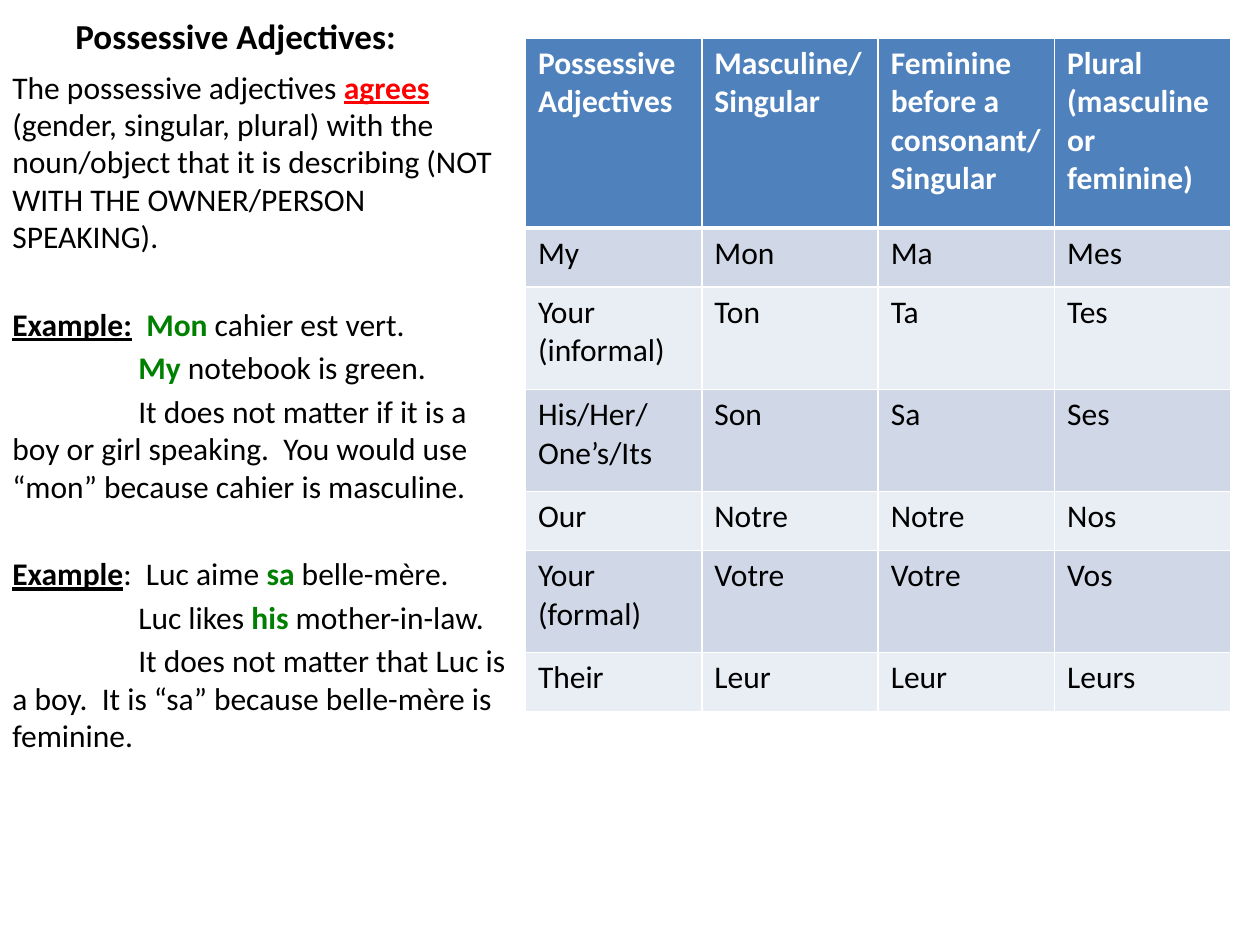
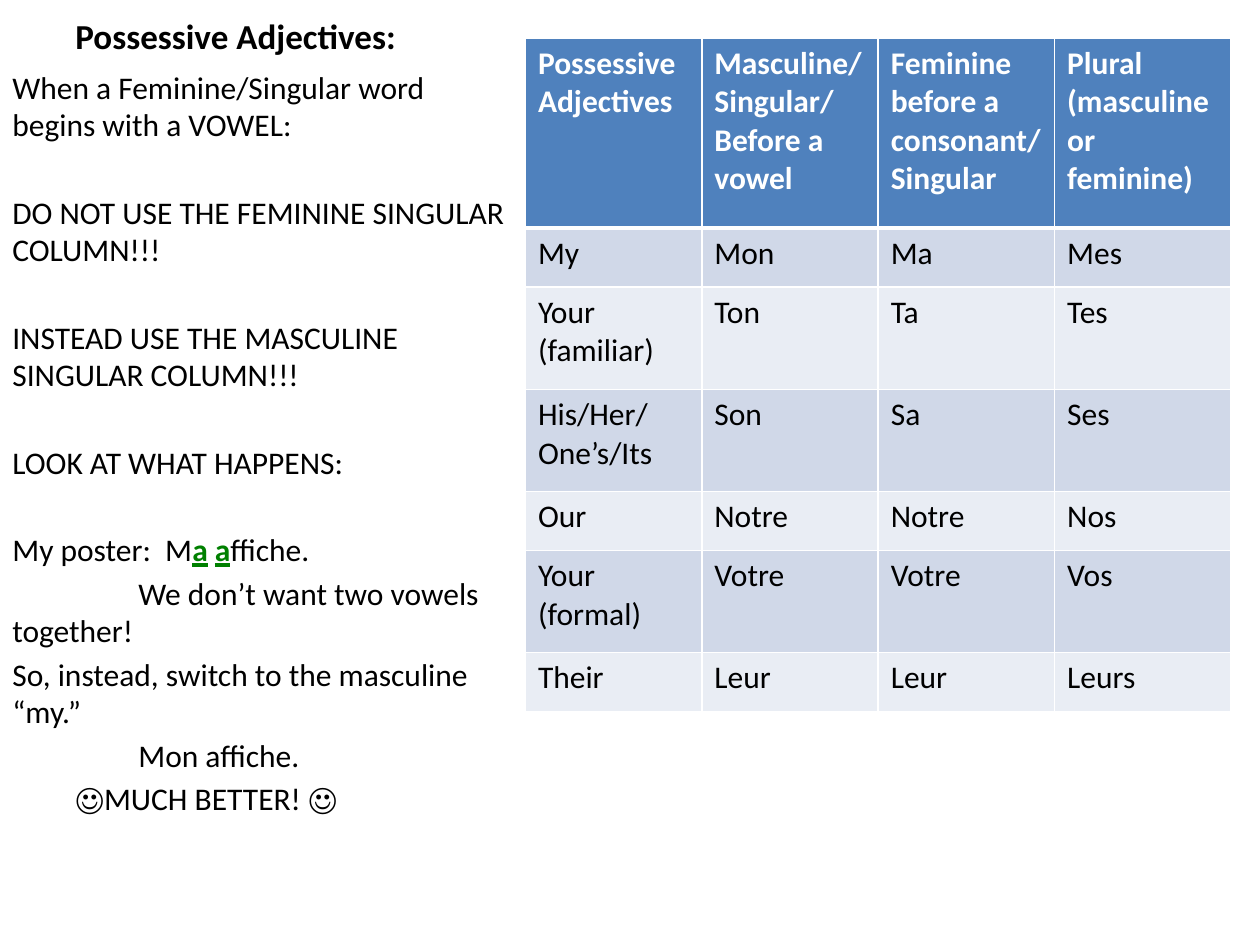
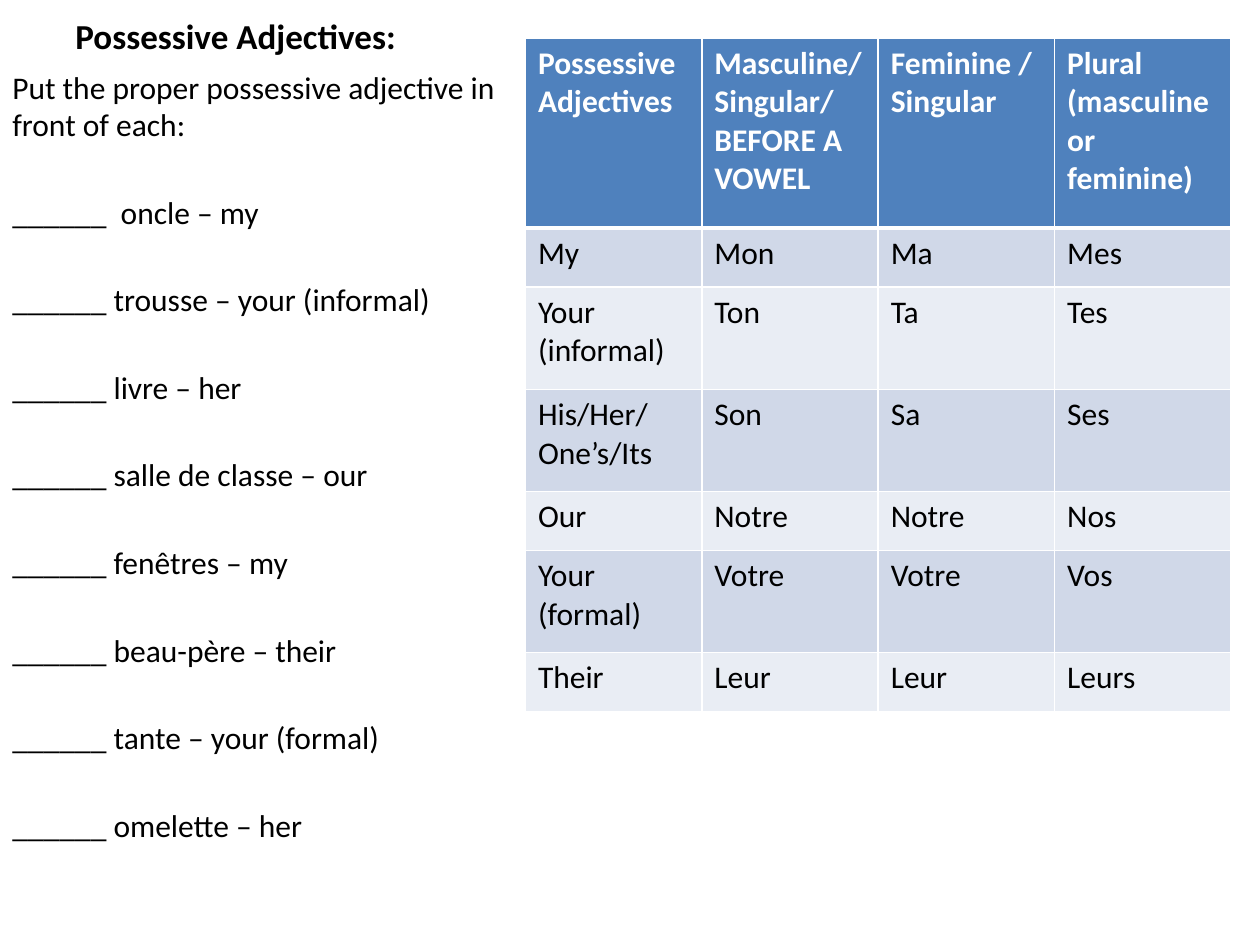
from pptx import Presentation
from pptx.dml.color import RGBColor as RGB
from pptx.enum.text import MSO_ANCHOR as Anchor
from pptx.oxml import parse_xml
from pptx.oxml.ns import nsdecls
from pptx.util import Inches, Pt

HUES = {
    "ink": "000000", "white": "FFFFFF", "red": "FF0000", "green": "008000",
    "head": "4F81BD", "odd": "D0D8E8", "even": "E9EDF4",
}
FONT = "Calibri"
TITLE = "Possessive Adjectives:"
NEAR, FAR = 3.5, 28.7  # points before a line, and before a new block

# Run formats
BOLD = dict(bold=True, line=True)
GREEN = dict(hue="green", bold=True)
VOWEL = dict(GREEN, line=True)
RED = dict(BOLD, hue="red")

# Table parts
COL = 1.4
HIGH = [1.51, 0.47, 0.81, 0.81, 0.47, 0.81, 0.47]
FEM = "Feminine before a consonant/Singular"
OWNERS = "His/Her/\nOne’s/Its"


def add_run(para, text, hue="ink", size=18, bold=False, line=False):
    run = para.add_run()
    run.text = text
    font = run.font
    font.name, font.size = FONT, Pt(size)
    font.bold, font.underline = bold, line
    font.color.rgb = RGB.from_string(HUES[hue])


def add_box(slide, left, top, width, height, anchor=Anchor.TOP):
    box = slide.shapes.add_textbox(
        Inches(left), Inches(top), Inches(width), Inches(height))
    frame = box.text_frame
    frame.word_wrap = True
    frame.vertical_anchor = anchor
    return frame


def add_title(slide):
    frame = add_box(slide, 0.5, 0, 3.29, 0.5, Anchor.BOTTOM)
    add_run(frame.paragraphs[0], TITLE, size=20, bold=True)


def add_body(slide, paras):
    """Each paragraph is (space before, first-line indent, runs)."""
    frame = add_box(slide, 0, 0.5, 4.17, 7)
    for num, (gap, dent, runs) in enumerate(paras):
        para = frame.add_paragraph() if num else frame.paragraphs[0]
        para.space_before = Pt(gap)
        para.line_spacing = 0.99
        props = para._p.get_or_add_pPr()
        props.set("marL", "0")
        props.set("indent", str(Inches(dent)))
        for text, style in runs:
            add_run(para, text, **style)


def add_edges(cell, row):
    """White rules, thicker below the head row."""
    wide = {"L": 1, "R": 1, "T": 3 if row == 1 else 1, "B": 1 if row else 3}
    props = cell._tc.get_or_add_tcPr()
    for spot, (side, size) in enumerate(wide.items()):
        props.insert(spot, parse_xml(
            f'<a:ln{side} {nsdecls("a")} w="{Pt(size)}"><a:solidFill>'
            f'<a:srgbClr val="{HUES["white"]}"/></a:solidFill></a:ln{side}>'))


def add_grid(slide, male, female, your, owners):
    rows = [
        ["Possessive Adjectives", male, female,
         "Plural (masculine or feminine)"],
        ["My", "Mon", "Ma", "Mes"],
        [your, "Ton", "Ta", "Tes"],
        [owners, "Son", "Sa", "Ses"],
        ["Our", "Notre", "Notre", "Nos"],
        ["Your (formal)", "Votre", "Votre", "Vos"],
        ["Their", "Leur", "Leur", "Leurs"],
    ]
    grid = slide.shapes.add_table(
        len(rows), 4, Inches(4.17), Inches(0.3),
        Inches(4 * COL), Inches(sum(HIGH))).table
    for col in grid.columns:
        col.width = Inches(COL)
    for r, words in enumerate(rows):
        grid.rows[r].height = Inches(HIGH[r])
        band = "head" if r == 0 else "odd" if r % 2 else "even"
        for c, word in enumerate(words):
            cell = grid.cell(r, c)
            cell.fill.solid()
            cell.fill.fore_color.rgb = RGB.from_string(HUES[band])
            add_edges(cell, r)
            frame = cell.text_frame
            for num, part in enumerate(word.split("\n")):
                para = frame.add_paragraph() if num else frame.paragraphs[0]
                add_run(para, part, hue="ink" if r else "white", bold=r == 0)


def plain(text, gap=NEAR, dent=0):
    return gap, dent, [(text, {})]


def add_page(deck, paras, male, female=FEM, your="Your (informal)",
             owners=OWNERS):
    slide = deck.slides.add_slide(deck.slide_layouts[6])
    add_title(slide)
    add_grid(slide, male, female, your, owners)
    add_body(slide, paras)


def main():
    deck = Presentation()
    deck.slide_width, deck.slide_height = Inches(10), Inches(7.5)

    # Agreement with the noun
    add_page(deck, [
        (NEAR, 0, [
            ("The possessive adjectives ", {}), ("agrees", RED),
            (" (gender, singular, plural) with the noun/object that it is "
             "describing (NOT WITH THE OWNER/PERSON SPEAKING).", {})]),
        (FAR, 0, [("Example:", BOLD), ("  ", {}), ("Mon", GREEN),
                  (" cahier est vert.", {})]),
        (NEAR, 1, [("My", GREEN), (" notebook is green.", {})]),
        plain("It does not matter if it is a boy or girl speaking.  You "
              "would use “mon” because cahier is masculine.", dent=1),
        (FAR, 0, [("Example", BOLD), (":  Luc aime ", {}), ("sa", GREEN),
                  (" belle-mère.", {})]),
        (NEAR, 1, [("Luc likes ", {}), ("his", GREEN),
                   (" mother-in-law.", {})]),
        plain("It does not matter that Luc is a boy.  It is “sa” because "
              "belle-mère is feminine.", dent=1),
    ], "Masculine/Singular")

    # Nouns that begin with a vowel
    add_page(deck, [
        plain("When a Feminine/Singular word begins with a VOWEL:"),
        plain("DO NOT USE THE FEMININE SINGULAR COLUMN!!!", FAR),
        plain("INSTEAD USE THE MASCULINE SINGULAR COLUMN!!!", FAR),
        plain("LOOK AT WHAT HAPPENS:", FAR),
        (FAR, 0, [("My poster:  M", {}), ("a", VOWEL), (" ", {}),
                  ("a", VOWEL), ("ffiche.", {})]),
        plain("We don’t want two vowels together!", dent=1),
        plain("So, instead, switch to the masculine “my.”"),
        plain("Mon affiche.", dent=1),
        plain("☺MUCH BETTER! ☺", dent=0.5),
    ], "Masculine/Singular/ Before a vowel", your="Your (familiar)")

    # Practice
    tasks = [" oncle – my", "trousse – your (informal)", "livre – her",
             "salle de classe – our", "fenêtres – my", "beau-père – their",
             "tante – your (formal)", "omelette – her"]
    add_page(deck, [
        plain("Put the proper possessive adjective in front of each:"),
        *[plain(f"______ {task}", FAR) for task in tasks],
    ], "Masculine/Singular/ BEFORE A VOWEL", "Feminine /Singular",
        owners="His/Her/One’s/Its")

    deck.save("out.pptx")


if __name__ == "__main__":
    main()
